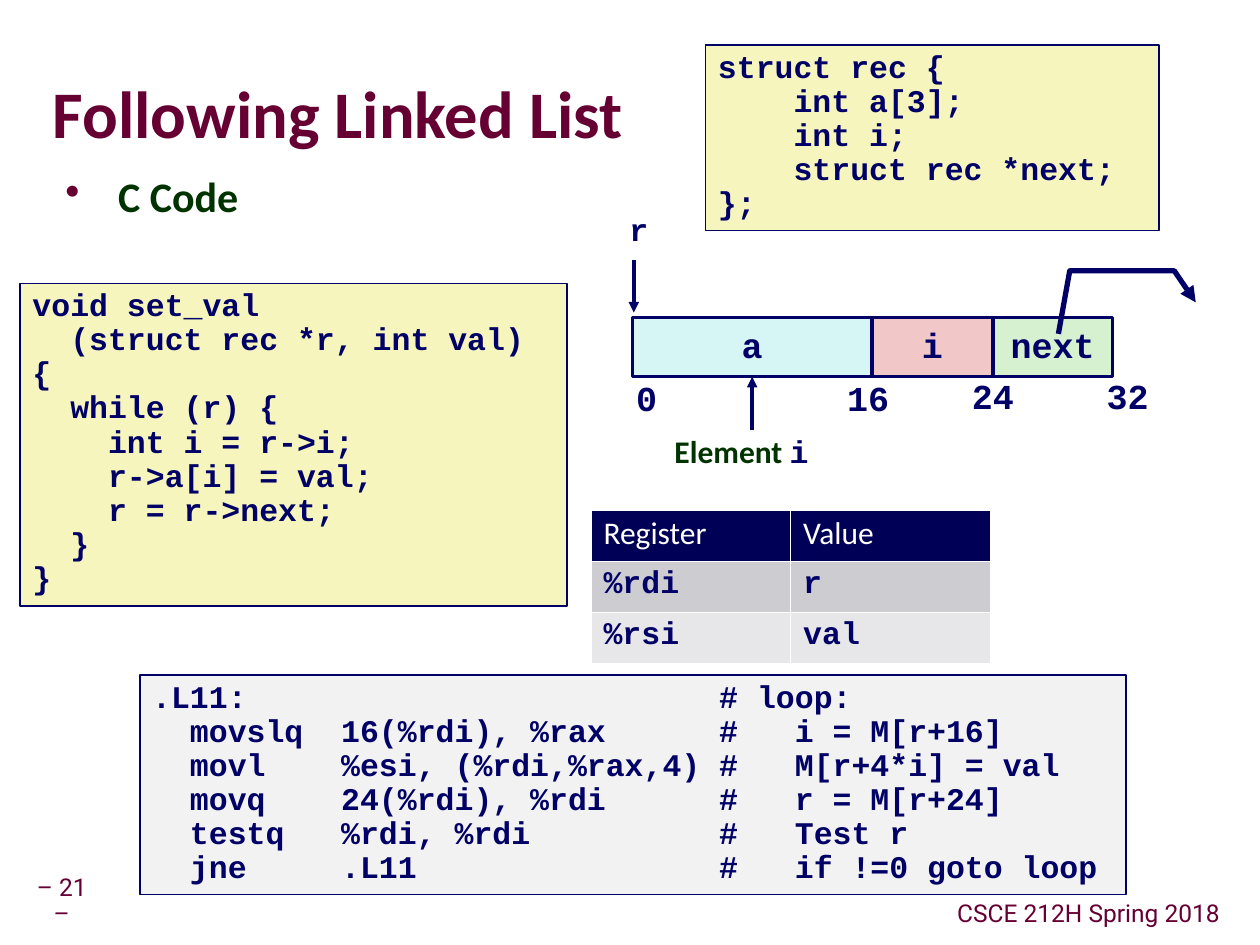
from dataclasses import dataclass
from typing import Any

from lxml.etree import SubElement
from pptx import Presentation
from pptx.dml.color import RGBColor
from pptx.enum.shapes import MSO_CONNECTOR as CONN, MSO_SHAPE as SHAPE
from pptx.enum.text import MSO_ANCHOR as ANCHOR, PP_ALIGN as ALIGN
from pptx.oxml.ns import qn
from pptx.util import Pt

PX = 9144
NAVY, WINE, GREEN, WHITE, CREAM = "000066", "660033", "003300", "FFFFFF", "F6F5BD"
MONO, SANS, SMALL = "Courier New", "Calibri", "Roboto"

STRUCT = """struct rec {
    int a[3];
    int i;
    struct rec *next;
};"""
C_CODE = """void set_val
  (struct rec *r, int val)
{
  while (r) {
    int i = r->i;
    r->a[i] = val;
    r = r->next;
  }
}"""
ASSEMBLY = """.L11:                         # loop:
  movslq  16(%rdi), %rax      #   i = M[r+16]
  movl    %esi, (%rdi,%rax,4) #   M[r+4*i] = val
  movq    24(%rdi), %rdi      #   r = M[r+24]
  testq   %rdi, %rdi          #   Test r
  jne     .L11                #   if !=0 goto loop"""


@dataclass
class Box:
    """A filled rectangle with text, in px."""
    text: str
    x: int
    y: int
    w: int
    h: int
    fill: str


@dataclass
class Label:
    """A free text, in px."""
    text: str
    x: int
    y: int
    w: int
    h: int
    size: int = 20


CODE = [Box(ASSEMBLY, 111, 536, 783, 174, "F2F2F2"),
        Box(C_CODE, 16, 225, 434, 256, CREAM),
        Box(STRUCT, 560, 36, 360, 147, CREAM)]
FIELDS = [Box("a", 502, 252, 190, 47, "D6F5F5"),
          Box("i", 692, 252, 96, 47, "F1C7C7"),
          Box("next", 788, 252, 95, 47, "D5F1CF")]
LABELS = [Label("r", 487, 165, 40, 50, 18),
          Label("0", 495, 298, 36, 43),
          Label("16", 662, 298, 54, 43),
          Label("24", 761, 296, 54, 43),
          Label("32", 868, 296, 54, 43)]
REGISTERS = [("Register", "Value"), ("%rdi", "r"), ("%rsi", "val")]
ROW_FILLS = ["000056", "CCCCD1", "E7E7E9"]


def rgb(color: str) -> RGBColor:
    """Turn a hex string into a colour."""
    return RGBColor.from_string(color)


def px(*values: int) -> list[int]:
    """Turn px into EMU."""
    return [v * PX for v in values]


def add_run(p: Any, text: str, size: int, font: str, color: str, bold: bool) -> Any:
    """Append one formatted run to a paragraph."""
    r = p.add_run()
    r.text = text
    r.font.size, r.font.name, r.font.bold = Pt(size), font, bold
    r.font.color.rgb = rgb(color)
    return r


def write(tf: Any, text: str, *, size: int = 18, font: str = MONO, color: str = NAVY,
          bold: bool = True, align: Any = ALIGN.LEFT, anchor: Any = ANCHOR.TOP,
          wrap: bool = True, spacing: float = 0.9) -> Any:
    """Fill a text frame line by line and return its last run."""
    tf.word_wrap, tf.vertical_anchor = wrap, anchor
    for n, line in enumerate(text.split("\n")):
        p = tf.add_paragraph() if n else tf.paragraphs[0]
        p.alignment, p.line_spacing = align, spacing
        r = add_run(p, line, size, font, color, bold)
    return r


def set_margins(tf: Any, margin: int) -> None:
    """Give a text frame equal margins in px."""
    tf.margin_left = tf.margin_top = tf.margin_right = tf.margin_bottom = margin * PX


def add_text(s: Any, text: str, x: int, y: int, w: int, h: int, **fmt: Any) -> Any:
    """Add a text box and return its text frame."""
    tf = s.shapes.add_textbox(*px(x, y, w, h)).text_frame
    write(tf, text, **fmt)
    return tf


def add_box(s: Any, b: Box, line: int, **fmt: Any) -> Any:
    """Draw a bordered rectangle with text."""
    sp = s.shapes.add_shape(SHAPE.RECTANGLE, *px(b.x, b.y, b.w, b.h))
    sp.shadow.inherit = False
    sp.fill.solid()
    sp.fill.fore_color.rgb = rgb(b.fill)
    sp.line.color.rgb, sp.line.width = rgb(NAVY), Pt(line)
    write(sp.text_frame, b.text, **fmt)
    return sp


def style_arrow(sp: Any, width: int) -> None:
    """Give a line its colour, width and arrowhead, without a shadow."""
    sp.line.color.rgb, sp.line.width = rgb(NAVY), Pt(width)
    SubElement(sp.line._get_or_add_ln(), qn("a:tailEnd"), type="triangle")
    SubElement(sp._element.spPr, qn("a:effectLst"))


def add_arrow(s: Any, x1: int, y1: int, x2: int, y2: int) -> Any:
    """Draw a straight arrow."""
    sp = s.shapes.add_connector(CONN.STRAIGHT, *px(x1, y1, x2, y2))
    style_arrow(sp, 2)
    return sp


def add_pointer(s: Any, points: list[tuple[int, int]]) -> None:
    """Draw a bent arrow through the points."""
    fb = s.shapes.build_freeform(*points[0], scale=PX)
    fb.add_line_segments(points[1:], close=False)
    sp = fb.convert_to_shape()
    sp.fill.background()
    style_arrow(sp, 3)


def add_title(s: Any, text: str) -> None:
    """Place the title and give its text a shadow."""
    sp = s.shapes.title
    sp.left, sp.top, sp.width, sp.height = px(42, 62, 790, 63)
    set_margins(sp.text_frame, 0)
    r = write(sp.text_frame, text, size=38, font=SANS, color=WINE,
              anchor=ANCHOR.MIDDLE, spacing=0.87)
    fill = r.font._element.find(qn("a:solidFill"))
    effects = SubElement(r.font._element, qn("a:effectLst"))
    fill.addnext(effects)
    shadow = SubElement(effects, qn("a:outerShdw"), dist="63500", dir="2700000")
    SubElement(shadow, qn("a:srgbClr"), val="969696")


def add_bullet(s: Any, text: str) -> None:
    """Add the bulleted line under the title."""
    tf = add_text(s, text, 42, 133, 333, 78, size=24, font=SANS, color=GREEN, spacing=0.95)
    pPr = tf.paragraphs[0]._p.get_or_add_pPr()
    pPr.set("marL", str(42 * PX))
    pPr.set("indent", str(-42 * PX))
    SubElement(SubElement(pPr, qn("a:buClr")), qn("a:srgbClr"), val=WINE)
    SubElement(pPr, qn("a:buChar"), char="•")


def add_registers(s: Any) -> None:
    """Add the register table."""
    table = s.shapes.add_table(3, 2, *px(469, 405, 317, 122)).table
    for row, texts, color in zip(table.rows, REGISTERS, ROW_FILLS):
        header = texts == REGISTERS[0]
        fmt = dict(font=SANS, color=WHITE, bold=False) if header else {}
        for cell, text in zip(row.cells, texts):
            write(cell.text_frame, text, **fmt)
            tcPr = cell._tc.get_or_add_tcPr()
            for side in ("lnL", "lnR", "lnT", "lnB"):
                ln = SubElement(tcPr, qn(f"a:{side}"), w=str(Pt(1)))
                SubElement(SubElement(ln, qn("a:solidFill")), qn("a:srgbClr"), val=WHITE)
            cell.fill.solid()
            cell.fill.fore_color.rgb = rgb(color)


def main() -> None:
    """Build the slide."""
    prs = Presentation()
    prs.slide_width, prs.slide_height = px(1000, 750)
    s = prs.slides.add_slide(prs.slide_layouts[5])
    add_title(s, "Following Linked List")
    footer = dict(size=14, font=SMALL, color=WINE, bold=False,
                  align=ALIGN.CENTER, anchor=ANCHOR.MIDDLE)
    set_margins(add_text(s, "– 21 –", 20, 700, 58, 31, **footer), 5)
    set_margins(add_text(s, "CSCE 212H Spring 2018", 750, 710, 228, 31,
                         wrap=False, **footer), 5)
    for b in CODE:
        add_box(s, b, 1)
    add_bullet(s, "C Code")
    add_registers(s)
    centred = dict(align=ALIGN.CENTER, wrap=False)
    array, *_ = [add_box(s, b, 2, size=20, anchor=ANCHOR.MIDDLE, **centred) for b in FIELDS]
    for t in LABELS:
        add_text(s, t.text, t.x, t.y, t.w, t.h, size=t.size, **centred)
    tf = add_text(s, "Element ", 505, 341, 167, 42, font=SANS, color=GREEN, align=ALIGN.CENTER)
    add_run(tf.paragraphs[0], "i", 18, MONO, NAVY, True)
    add_arrow(s, 597, 341, 597, 299).end_connect(array, 2)
    add_arrow(s, 503, 206, 503, 248)
    add_pointer(s, [(840, 265), (849, 215), (932, 215), (949, 240)])
    prs.save("out.pptx")


if __name__ == "__main__":
    main()
